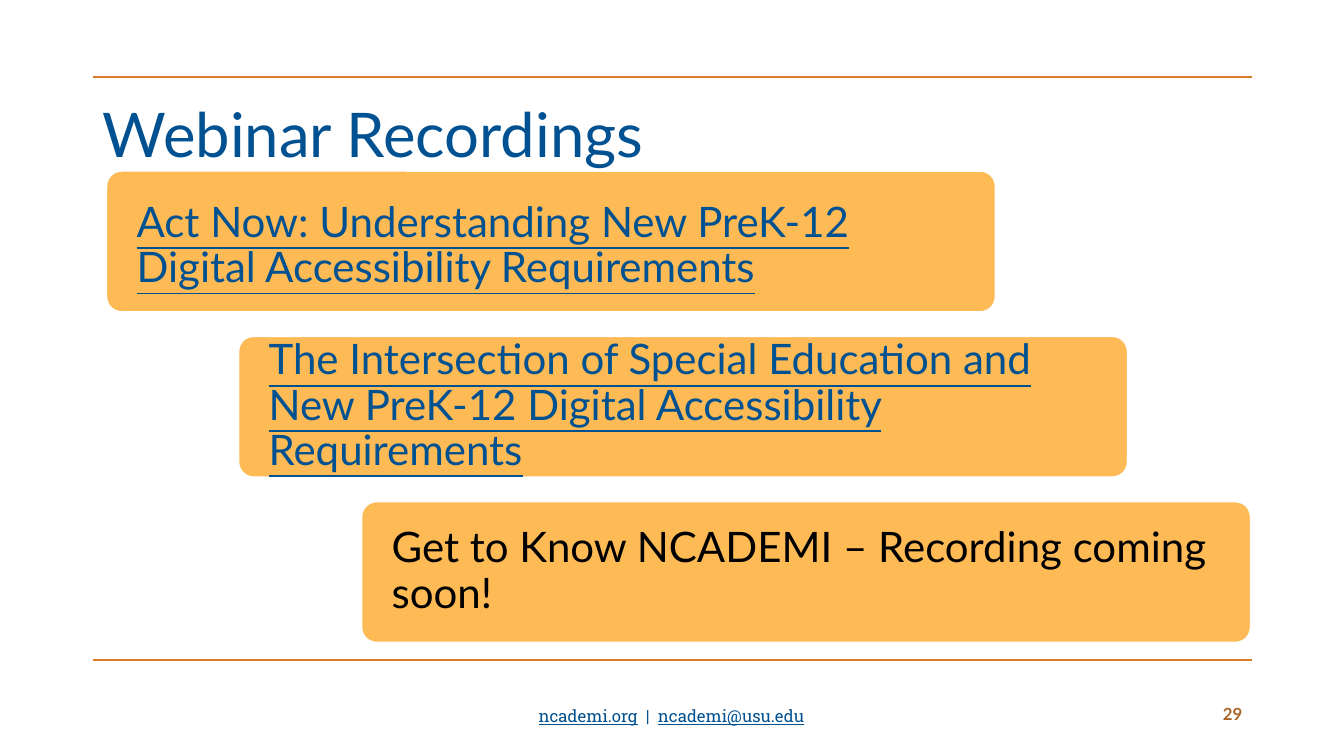
import pptx
import pptx.util
import pptx.dml.color
import pptx.enum.shapes
import pptx.enum.text
import pptx.oxml.ns
from lxml import etree

EMU_PER_PX = 9144
ALIGN = pptx.enum.text.PP_ALIGN
ANCHOR = pptx.enum.text.MSO_ANCHOR
SHAPE = pptx.enum.shapes.MSO_SHAPE

BLUE, ORANGE, AMBER = "005191", "D87D26", "FDBA55"
RULE = {"left": 92, "right": 1242, "tops": (76, 655)}

TITLE = [("Webinar Recordings", {"name": "Lato", "size": 44, "color": BLUE})]
FOOTER_FORMAT = {"name": "Roboto Slab", "size": 12, "color": BLUE}
FOOTER = [
    ("ncademi.org", {**FOOTER_FORMAT, "underline": True}),
    ("  |  ", FOOTER_FORMAT),
    ("ncademi@usu.edu", {**FOOTER_FORMAT, "underline": True}),
]
PAGE_NUMBER = [("29", {"name": "Lato", "size": 12, "color": "AB6527", "bold": True})]

LINK = {"name": "Lato", "size": 30, "color": BLUE, "underline": True}
PLAIN = {"name": "Lato", "size": 30, "color": "000000"}
CARDS = [
    (105, 2, "Act Now: Understanding New PreK-12 Digital Accessibility Requirements", LINK),
    (236, 12, "The Intersection of Special Education and New PreK-12 Digital Accessibility Requirements", LINK),
    (358, 12, "Get to Know NCADEMI – Recording coming soon!", PLAIN),
]
CARD_TOP, CARD_STEP, CARD_WIDTH, CARD_HEIGHT = 169, 164, 883, 141


def px(*lengths):
    return [pptx.util.Emu(length * EMU_PER_PX) for length in lengths]


def color(value):
    return pptx.dml.color.RGBColor.from_string(value)


def write(shape, spans, anchor, align=ALIGN.LEFT, spacing=1.0, insets=(10, 5, 10, 5)):
    frame = shape.text_frame
    frame.word_wrap = True
    frame.vertical_anchor = anchor
    for side, inset in zip(("left", "top", "right", "bottom"), px(*insets)):
        setattr(frame, f"margin_{side}", inset)
    para = frame.paragraphs[0]
    para.alignment = align
    para.line_spacing = spacing
    for text, style in spans:
        span = para.add_run()
        span.text = text
        for key, value in style.items():
            if key == "color":
                span.font.color.rgb = color(value)
            else:
                setattr(span.font, key, pptx.util.Pt(value) if key == "size" else value)


def add_rule(page, top):
    rule = page.shapes.add_connector(
        pptx.enum.shapes.MSO_CONNECTOR.STRAIGHT,
        *px(RULE["left"], top, RULE["right"], top),
    )
    rule.line.color.rgb = color(ORANGE)
    rule.line.width = pptx.util.Pt(1.5)
    etree.SubElement(rule._element.spPr, pptx.oxml.ns.qn("a:effectLst"))


def add_card(page, index, left, bottom_inset, text, style):
    top = CARD_TOP + index * CARD_STEP
    card = page.shapes.add_shape(
        SHAPE.ROUNDED_RECTANGLE, *px(left, top, CARD_WIDTH, CARD_HEIGHT)
    )
    card.adjustments[0] = 0.11
    card.shadow.inherit = False
    card.fill.solid()
    card.fill.fore_color.rgb = color(AMBER)
    card.line.color.rgb = color("FFFFFF")
    card.line.width = pptx.util.Pt(2)
    write(card, [(text, style)], ANCHOR.MIDDLE, spacing=0.9, insets=(26, 12, 22, bottom_inset))


def main():
    deck = pptx.Presentation()
    deck.slide_width, deck.slide_height = px(1333, 750)
    page = deck.slides.add_slide(deck.slide_layouts[6])
    for top in RULE["tops"]:
        add_rule(page, top)
    footer = page.shapes.add_textbox(*px(364, 695, 604, 30))
    write(footer, FOOTER, ANCHOR.TOP, ALIGN.CENTER)
    title = page.shapes.add_textbox(*px(92, 90, 1150, 92))
    write(title, TITLE, ANCHOR.MIDDLE, spacing=0.9)
    for index, card in enumerate(CARDS):
        add_card(page, index, *card)
    number = page.shapes.add_textbox(*px(1142, 688, 100, 40))
    write(number, PAGE_NUMBER, ANCHOR.MIDDLE, ALIGN.RIGHT)
    deck.save("out.pptx")


if __name__ == "__main__":
    main()
